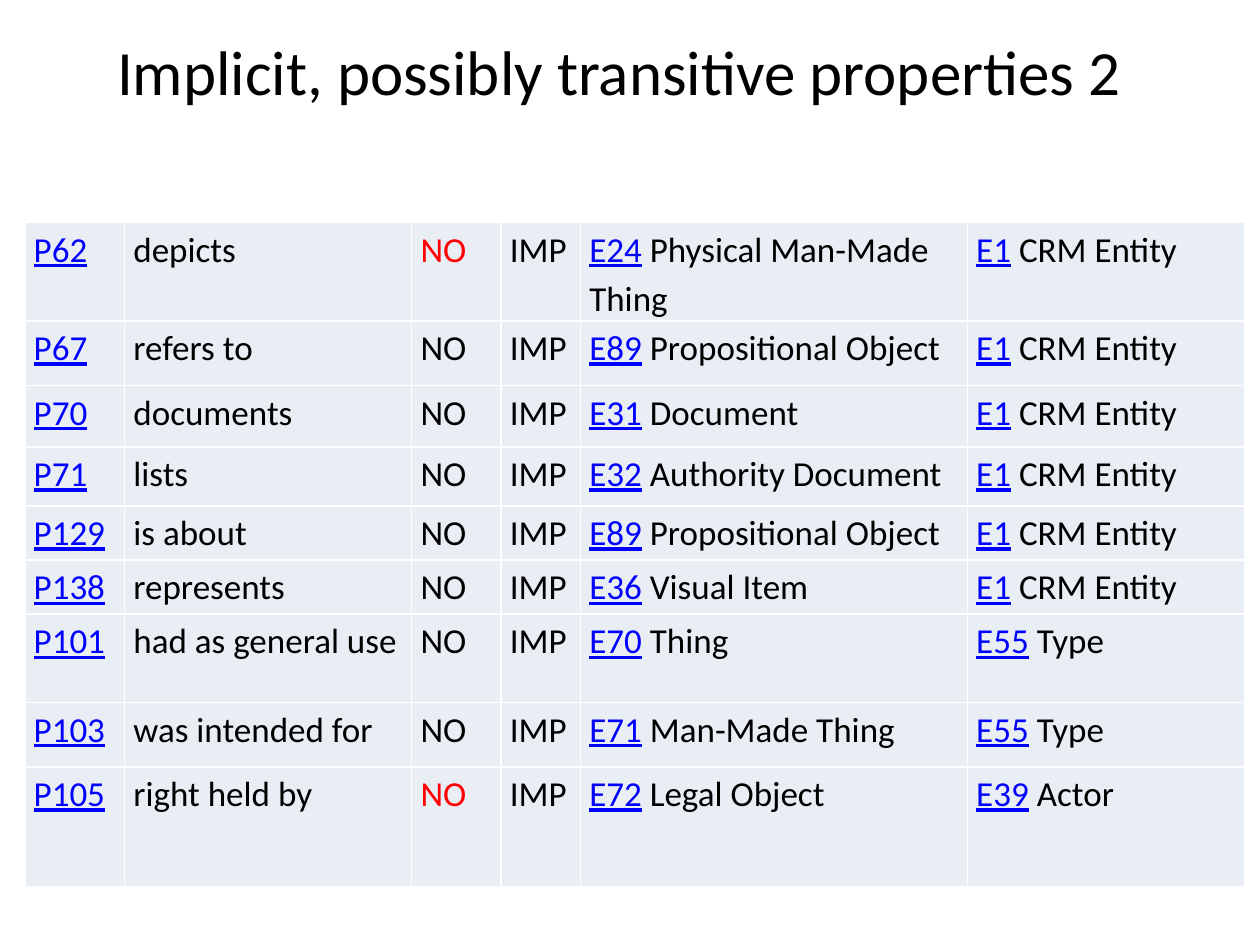
import dataclasses

import pptx
import pptx.dml.color
import pptx.enum.text
import pptx.oxml
import pptx.oxml.ns
import pptx.util
from pptx.util import Cm


@dataclasses.dataclass(frozen=True)
class Theme:
    font: str = "Calibri"
    title_size: int = 36
    table_size: int = 20
    text: str = "000000"
    link: str = "0000FF"
    warning: str = "FF0000"
    cell: str = "E9EDF4"
    border: str = "FFFFFF"


THEME = Theme()
RGB = pptx.dml.color.RGBColor.from_string

COLUMN_WIDTHS = [2.01, 5.79, 1.8, 1.6, 7.8, 5.59]
LINK_COLUMNS = {0, 4, 5}
TRANSITIVE_COLUMN = 2
HIGHLIGHTED = {"P62", "P105"}

# Row height in cm, property, name, domain, range
PROPERTIES = [
    (1.3, "P62", "depicts", "E24 Physical Man-Made Thing", "E1 CRM Entity"),
    (1.3, "P67", "refers to", "E89 Propositional Object", "E1 CRM Entity"),
    (1.24, "P70", "documents", "E31 Document", "E1 CRM Entity"),
    (1.19, "P71", "lists", "E32 Authority Document", "E1 CRM Entity"),
    (1.09, "P129", "is about", "E89 Propositional Object", "E1 CRM Entity"),
    (1.09, "P138", "represents", "E36 Visual Item", "E1 CRM Entity"),
    (1.78, "P101", "had as general use", "E70 Thing", "E55 Type"),
    (1.3, "P103", "was intended for", "E71 Man-Made Thing", "E55 Type"),
    (2.41, "P105", "right held by", "E72 Legal Object", "E39 Actor"),
]


def format_cell(cell):
    """Set the margins, white borders and fill of a table cell."""
    cell.margin_left = cell.margin_right = Cm(0.18)
    cell.margin_top = cell.margin_bottom = 0
    properties = cell._tc.get_or_add_tcPr()
    for side in ("lnL", "lnR", "lnT", "lnB"):
        properties.append(pptx.oxml.parse_xml(
            f'<a:{side} {pptx.oxml.ns.nsdecls("a")} w="{pptx.util.Pt(1)}">'
            f'<a:solidFill><a:srgbClr val="{THEME.border}"/></a:solidFill></a:{side}>'))
    cell.fill.solid()
    cell.fill.fore_color.rgb = RGB(THEME.cell)


def set_font(paragraph, size, color):
    paragraph.font.name = THEME.font
    paragraph.font.size = pptx.util.Pt(size)
    paragraph.font.color.rgb = RGB(color)


deck = pptx.Presentation()
deck.slide_width, deck.slide_height = Cm(25.4), Cm(19.05)
page = deck.slides.add_slide(deck.slide_layouts[6])

heights = [row[0] for row in PROPERTIES]
table = page.shapes.add_table(
    len(PROPERTIES), len(COLUMN_WIDTHS), Cm(0.5), Cm(4.48),
    Cm(sum(COLUMN_WIDTHS)), Cm(sum(heights))).table
table.first_row = table.horz_banding = False
for column, width in zip(table.columns, COLUMN_WIDTHS):
    column.width = Cm(width)

for row_index, (height, code, name, domain, target) in enumerate(PROPERTIES):
    table.rows[row_index].height = Cm(height)
    for column_index, text in enumerate([code, name, "NO", "IMP", domain, target]):
        cell = table.cell(row_index, column_index)
        format_cell(cell)
        para = cell.text_frame.paragraphs[0]
        para.line_spacing = 1.15
        warned = column_index == TRANSITIVE_COLUMN and code in HIGHLIGHTED
        set_font(para, THEME.table_size, THEME.warning if warned else THEME.text)
        if column_index == 0:
            para.alignment = pptx.enum.text.PP_ALIGN.JUSTIFY
        if column_index in LINK_COLUMNS:
            identifier, space, label = text.partition(" ")
            span = para.add_run()
            span.text = identifier
            span.font.underline = True
            span.font.color.rgb = RGB(THEME.link)
            text = space + label
        if text:
            para.add_run().text = text

box = page.shapes.add_textbox(Cm(2.11), Cm(0.53), Cm(20.96), Cm(1.8))
box.text_frame.word_wrap = False
box.text_frame.auto_size = pptx.enum.text.MSO_AUTO_SIZE.SHAPE_TO_FIT_TEXT
title = box.text_frame.paragraphs[0]
title.text = "Implicit, possibly transitive properties 2"
set_font(title, THEME.title_size, THEME.text)

deck.save("out.pptx")
